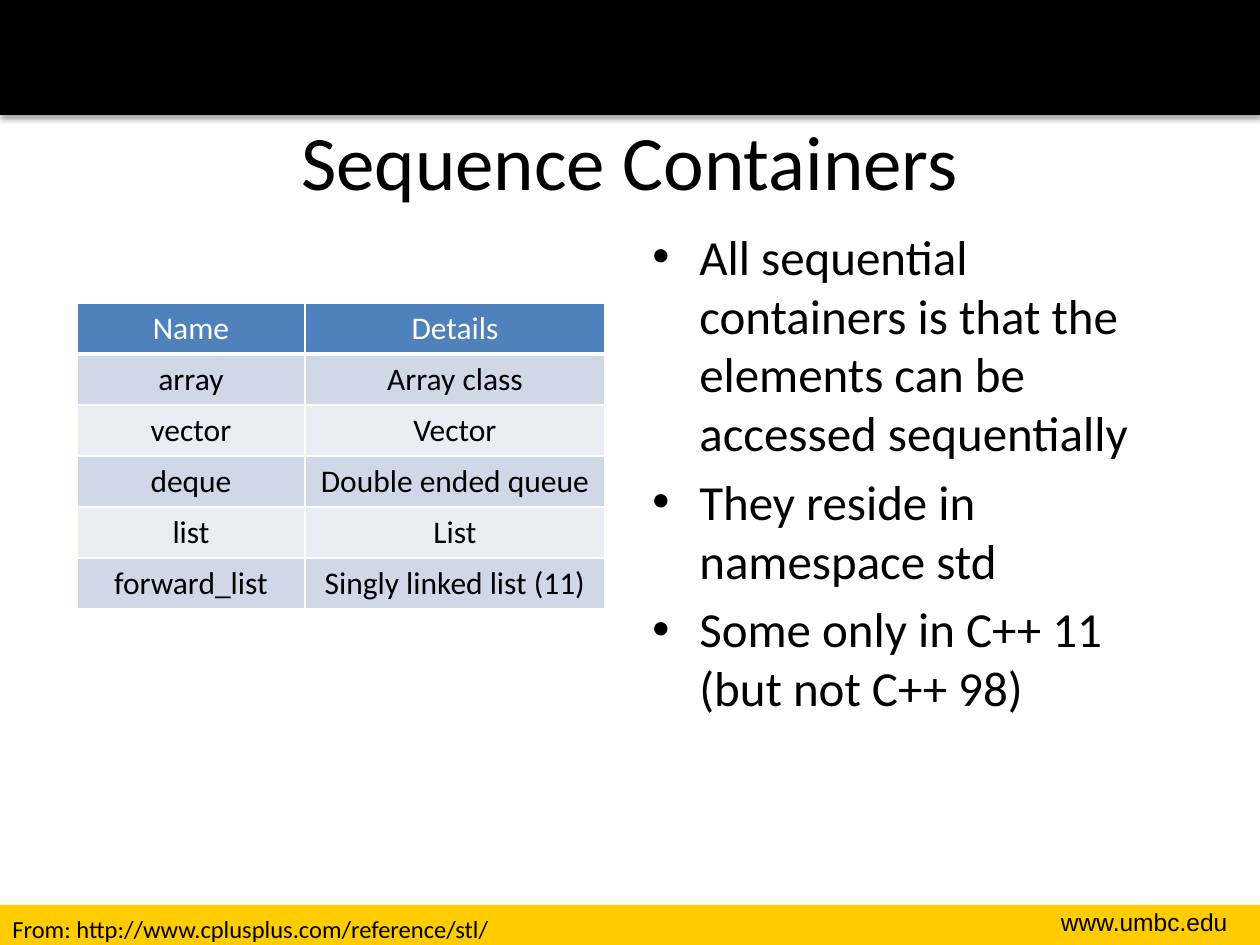
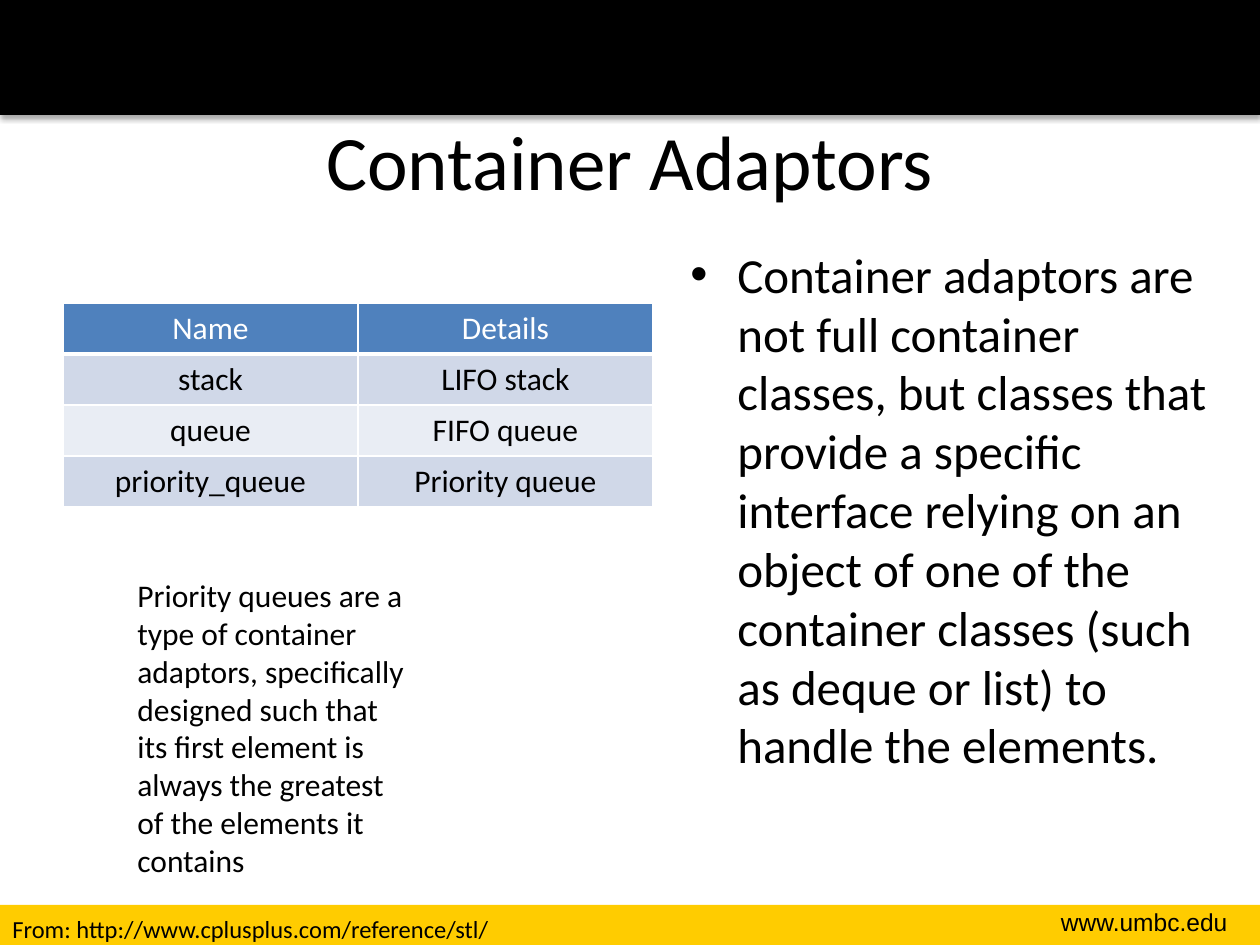
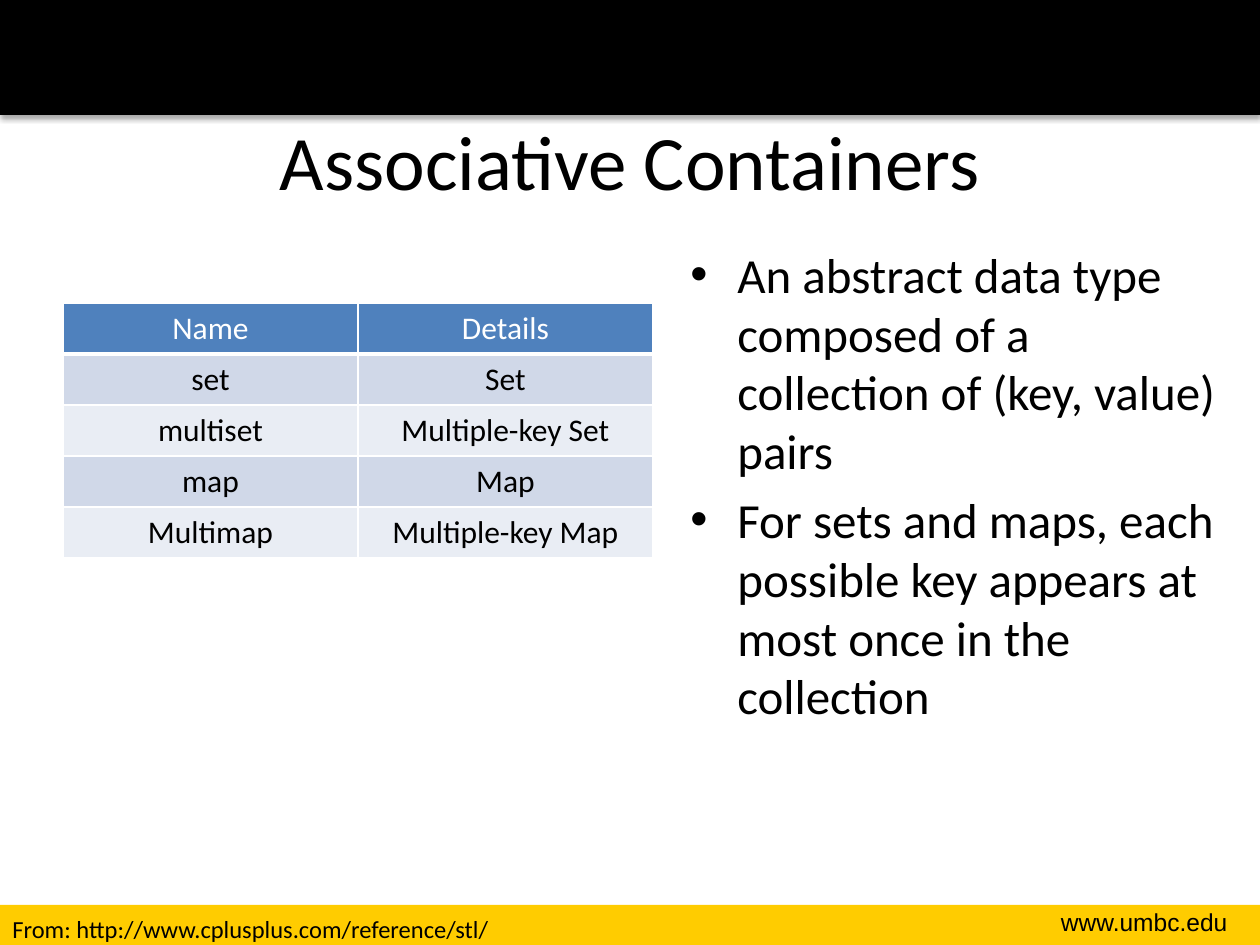
"""Build three slides on the container classes of the C++ standard library."""
from dataclasses import dataclass
from typing import Optional

import lxml.etree
import pptx
import pptx.dml.color
import pptx.enum.shapes
import pptx.enum.text
import pptx.oxml
import pptx.oxml.ns
import pptx.util

PX_PER_INCH = 126
SLIDE_WIDTH, SLIDE_HEIGHT = 1260, 945
BLANK_LAYOUT = 6
ROW_HEIGHT = 51
BULLET_INDENT = 47

BLACK = pptx.dml.color.RGBColor(0x00, 0x00, 0x00)
WHITE = pptx.dml.color.RGBColor(0xFF, 0xFF, 0xFF)
GOLD = pptx.dml.color.RGBColor(0xFF, 0xCC, 0x00)
HEADER_BLUE = pptx.dml.color.RGBColor(0x4F, 0x81, 0xBD)
ROW_BLUES = (
    pptx.dml.color.RGBColor(0xD0, 0xD8, 0xE8),
    pptx.dml.color.RGBColor(0xE9, 0xED, 0xF4),
)

LEFT = pptx.enum.text.PP_ALIGN.LEFT
CENTER = pptx.enum.text.PP_ALIGN.CENTER
RIGHT = pptx.enum.text.PP_ALIGN.RIGHT
TOP = pptx.enum.text.MSO_ANCHOR.TOP
MIDDLE = pptx.enum.text.MSO_ANCHOR.MIDDLE


@dataclass(frozen=True)
class Box:
    """A rectangle in px."""

    left: int
    top: int
    width: int
    height: int

    def emu(self) -> tuple:
        """Return the four lengths in EMU."""
        return tuple(px(n) for n in (self.left, self.top, self.width, self.height))


@dataclass(frozen=True)
class TextStyle:
    """The look of a text box."""

    size: int
    font_name: str = "Calibri"
    color: pptx.dml.color.RGBColor = BLACK
    alignment: pptx.enum.text.PP_ALIGN = LEFT
    anchor: pptx.enum.text.MSO_ANCHOR = TOP
    wrap: bool = True
    bulleted: bool = False


@dataclass(frozen=True)
class ContainerSlide:
    """A slide with a table of containers beside bullet points."""

    title: str
    table_left: int
    column_widths: tuple[int, int]
    rows: tuple[tuple[str, str], ...]
    points_box: Box
    points: tuple[str, ...]
    note: Optional[str] = None


TITLE_STYLE = TextStyle(44, alignment=CENTER, anchor=MIDDLE)
POINTS_STYLE = TextStyle(28, bulleted=True)
NOTE_STYLE = TextStyle(18)
SOURCE_STYLE = TextStyle(14, wrap=False)
SITE_STYLE = TextStyle(14, font_name="Arial", alignment=RIGHT)
HEADER_STYLE = TextStyle(18, color=WHITE, alignment=CENTER)
CELL_STYLE = TextStyle(18, alignment=CENTER)

TOP_BAND = Box(0, 0, SLIDE_WIDTH, 115)
FOOTER_BAND = Box(0, 905, SLIDE_WIDTH, 40)
SITE_BOX = Box(989, 901, 251, 43)
TITLE_BOX = Box(63, 81, 1134, 158)
SOURCE_BOX = Box(0, 908, 505, 43)
NOTE_BOX = Box(125, 570, 301, 318)
TABLE_TOP = 303
RIGHT_POINTS_BOX = Box(678, 238, 557, 624)

SLIDES = (
    ContainerSlide(
        "Sequence Containers",
        77,
        (228, 300),
        (
            ("array", "Array class"),
            ("vector", "Vector"),
            ("deque", "Double ended queue"),
            ("list", "List"),
            ("forward_list", "Singly linked list (11)"),
        ),
        Box(640, 220, 557, 624),
        (
            "All sequential containers is that the elements can be accessed sequentially",
            "They reside in namespace std",
            "Some only in C++ 11 (but not C++ 98)",
        ),
    ),
    ContainerSlide(
        "Container Adaptors",
        63,
        (295, 295),
        (
            ("stack", "LIFO stack"),
            ("queue", "FIFO queue"),
            ("priority_queue", "Priority queue"),
        ),
        RIGHT_POINTS_BOX,
        (
            "Container adaptors are not full container classes, but classes that "
            "provide a specific interface relying on an object of one of the "
            "container classes (such as deque or list) to handle the elements.",
        ),
        "Priority queues are a type of container adaptors, specifically designed "
        "such that its first element is always the greatest of the elements it contains",
    ),
    ContainerSlide(
        "Associative Containers",
        63,
        (295, 295),
        (
            ("set", "Set"),
            ("multiset", "Multiple-key Set"),
            ("map", "Map"),
            ("Multimap", "Multiple-key Map"),
        ),
        RIGHT_POINTS_BOX,
        (
            "An abstract data type composed of a collection of (key, value) pairs",
            "For sets and maps, each possible key appears at most once in the collection",
        ),
    ),
)


def px(length: int) -> pptx.util.Emu:
    """Turn px into EMU."""
    return pptx.util.Emu(round(length * 914400 / PX_PER_INCH))


def add_child(parent, tag: str, **attributes: object):
    """Append a DrawingML element to a parent."""
    values = {name: str(value) for name, value in attributes.items()}
    return lxml.etree.SubElement(parent, pptx.oxml.ns.qn(tag), values)


def add_bullet(paragraph) -> None:
    """Give a paragraph a hanging round bullet."""
    properties = paragraph._p.get_or_add_pPr()
    properties.set("marL", str(px(BULLET_INDENT)))
    properties.set("indent", str(-px(BULLET_INDENT)))
    add_child(properties, "a:buFont", typeface="Arial")
    add_child(properties, "a:buChar", char="•")


def write_paragraph(paragraph, text: str, style: TextStyle) -> None:
    """Write text in a paragraph and style it."""
    paragraph.text = text
    if style.bulleted:
        add_bullet(paragraph)
    paragraph.alignment = style.alignment
    paragraph.font.size = pptx.util.Pt(style.size)
    paragraph.font.name = style.font_name
    paragraph.font.color.rgb = style.color


def add_text(slide, box: Box, style: TextStyle, *texts: str) -> None:
    """Add a text box with one paragraph for each text."""
    frame = slide.shapes.add_textbox(*box.emu()).text_frame
    frame.word_wrap = style.wrap
    frame.vertical_anchor = style.anchor
    for index, text in enumerate(texts):
        paragraph = frame.add_paragraph() if index else frame.paragraphs[0]
        write_paragraph(paragraph, text, style)
        if index:
            paragraph.space_before = pptx.util.Pt(style.size * 0.2)


def add_band(slide, box: Box, color: pptx.dml.color.RGBColor):
    """Add a plain rectangle across the slide."""
    shape = slide.shapes.add_shape(pptx.enum.shapes.MSO_SHAPE.RECTANGLE, *box.emu())
    shape.shadow.inherit = False
    shape.fill.solid()
    shape.fill.fore_color.rgb = color
    shape.line.fill.background()
    return shape


def add_shadow(shape) -> None:
    """Cast a soft black shadow below a shape."""
    effects = shape._element.spPr.find(pptx.oxml.ns.qn("a:effectLst"))
    shadow = add_child(
        effects, "a:outerShdw", blurRad=pptx.util.Pt(3.1), dist=pptx.util.Pt(1.8),
        dir=90 * 60000, rotWithShape=0,
    )
    color = add_child(shadow, "a:srgbClr", val=BLACK)
    add_child(color, "a:alpha", val=35000)


def add_borders(cell, bottom_width: int) -> None:
    """Draw white borders around a cell."""
    properties = cell._tc.get_or_add_tcPr()
    widths = {"a:lnL": 1, "a:lnR": 1, "a:lnT": 1, "a:lnB": bottom_width}
    for tag, width in widths.items():
        line = add_child(properties, tag, w=pptx.util.Pt(width))
        add_child(add_child(line, "a:solidFill"), "a:srgbClr", val=WHITE)


def add_container_table(slide, content: ContainerSlide) -> None:
    """Add the table of container names and details."""
    rows = (("Name", "Details"), *content.rows)
    box = Box(
        content.table_left, TABLE_TOP, sum(content.column_widths), ROW_HEIGHT * len(rows)
    )
    table = slide.shapes.add_table(len(rows), len(rows[0]), *box.emu()).table
    table.first_row = False
    table.horz_banding = False
    for column, width in zip(table.columns, content.column_widths):
        column.width = px(width)
    for row_index, texts in enumerate(rows):
        is_header = row_index == 0
        for column_index, text in enumerate(texts):
            cell = table.cell(row_index, column_index)
            add_borders(cell, 3 if is_header else 1)
            cell.fill.solid()
            cell.fill.fore_color.rgb = (
                HEADER_BLUE if is_header else ROW_BLUES[(row_index - 1) % 2]
            )
            style = HEADER_STYLE if is_header else CELL_STYLE
            write_paragraph(cell.text_frame.paragraphs[0], text, style)


def add_container_slide(presentation, content: ContainerSlide) -> None:
    """Add one slide with the shared bands and its own content."""
    slide = presentation.slides.add_slide(presentation.slide_layouts[BLANK_LAYOUT])
    add_band(slide, FOOTER_BAND, GOLD)
    add_shadow(add_band(slide, TOP_BAND, BLACK))
    add_text(slide, SITE_BOX, SITE_STYLE, "www.umbc.edu")
    add_text(slide, TITLE_BOX, TITLE_STYLE, content.title)
    add_text(slide, content.points_box, POINTS_STYLE, *content.points)
    add_container_table(slide, content)
    add_text(
        slide, SOURCE_BOX, SOURCE_STYLE, "From: http://www.cplusplus.com/reference/stl/"
    )
    if content.note:
        add_text(slide, NOTE_BOX, NOTE_STYLE, content.note)


def main() -> None:
    """Build and save the presentation."""
    presentation = pptx.Presentation()
    presentation.slide_width = px(SLIDE_WIDTH)
    presentation.slide_height = px(SLIDE_HEIGHT)
    for content in SLIDES:
        add_container_slide(presentation, content)
    presentation.save("out.pptx")


if __name__ == "__main__":
    main()
